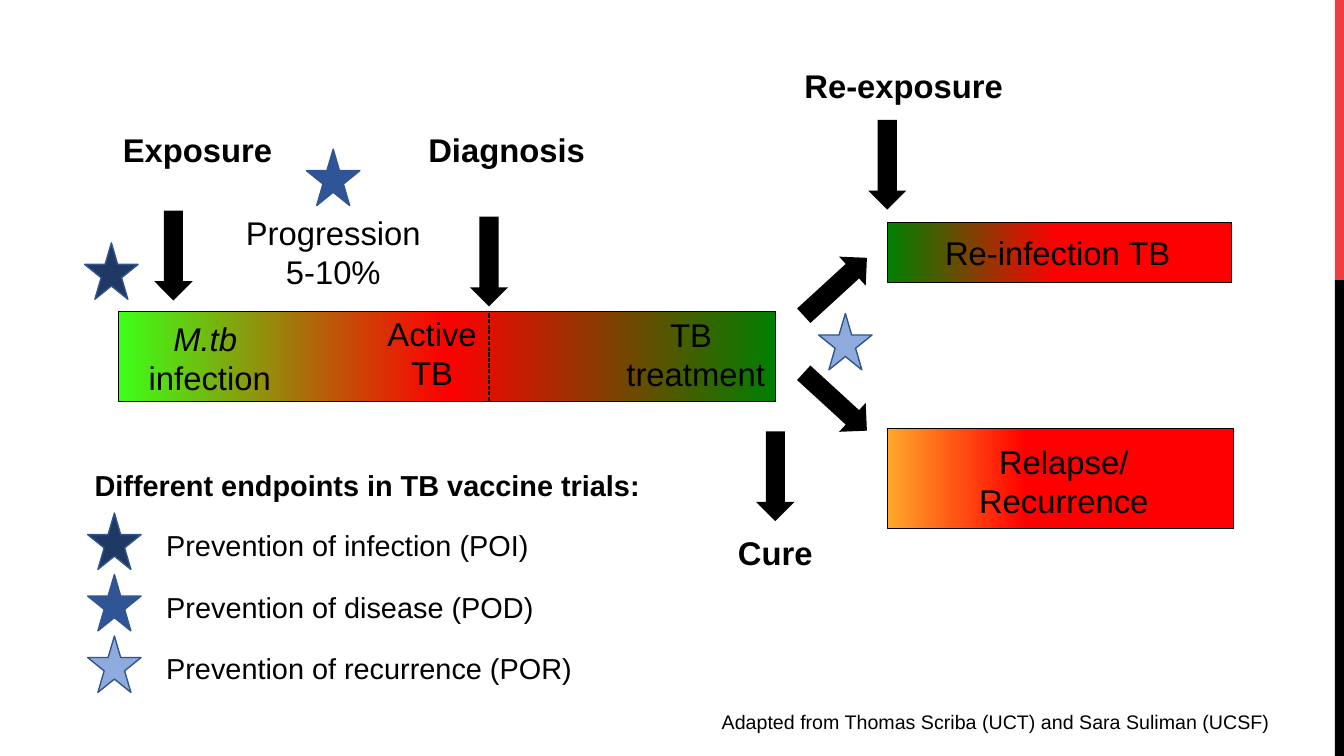
from dataclasses import dataclass

from lxml import etree
from pptx import Presentation
from pptx import util as u
from pptx.dml.color import RGBColor
from pptx.enum import dml, shapes, text
from pptx.oxml import ns

BLACK = RGBColor(0x00, 0x00, 0x00)
RED = RGBColor(0xFF, 0x00, 0x00)
GREEN = RGBColor(0x00, 0x80, 0x00)
LIME = RGBColor(0x3D, 0xFF, 0x17)
ORANGE = RGBColor(0xFF, 0xA8, 0x29)
STRIP_RED = RGBColor(0xEF, 0x3E, 0x42)
POI = RGBColor(0x20, 0x38, 0x64)
POD = RGBColor(0x2F, 0x55, 0x97)
POR = RGBColor(0x8F, 0xAA, 0xDC)
STAR_EDGE = RGBColor(0x32, 0x54, 0x91)

LABEL, LEGEND, CREDIT = 23.4, 20.6, 14
SHAPE = shapes.MSO_SHAPE


@dataclass
class Box:
    left: float
    top: float
    width: float
    height: float

    def emu(self) -> list[int]:
        return [u.Inches(v) for v in (self.left, self.top, self.width, self.height)]


@dataclass
class Bar:
    box: Box
    stops: list[tuple[int, RGBColor]]


@dataclass
class Arrow:
    box: Box
    rotation: float = 0


@dataclass
class Star:
    left: float
    top: float
    color: RGBColor


@dataclass
class Label:
    box: Box
    lines: list[str]
    size: float = LABEL
    bold: bool = False
    centered: bool = False
    wrap: bool = False
    italic_first: bool = False


def add_solid(s, kind, box: Box, color: RGBColor, edge: RGBColor | None = None):
    sp = s.shapes.add_shape(kind, *box.emu())
    sp.shadow.inherit = False
    sp.fill.solid()
    sp.fill.fore_color.rgb = color
    if edge is None:
        sp.line.fill.background()
    else:
        sp.line.color.rgb = edge
        sp.line.width = u.Pt(1)
    return sp


def add_bar(s, bar: Bar) -> None:
    sp = add_solid(s, SHAPE.RECTANGLE, bar.box, RED, BLACK)
    sp.line.width = u.Pt(0.5)
    sp.fill.gradient()
    sp.fill.gradient_angle = 0
    stop_list = sp.element.spPr.find(".//" + ns.qn("a:gsLst"))
    for old in list(stop_list):
        stop_list.remove(old)
    for percent, color in bar.stops:
        stop = etree.SubElement(stop_list, ns.qn("a:gs"), pos=str(percent * 1000))
        etree.SubElement(stop, ns.qn("a:srgbClr"), val=str(color))


def add_arrow(s, arrow: Arrow) -> None:
    add_solid(s, SHAPE.DOWN_ARROW, arrow.box, BLACK).rotation = arrow.rotation


def add_star(s, star: Star) -> None:
    box = Box(star.left, star.top, 0.53, 0.56)
    add_solid(s, SHAPE.STAR_5_POINT, box, star.color, STAR_EDGE)


def add_label(s, label: Label) -> None:
    tf = s.shapes.add_textbox(*label.box.emu()).text_frame
    tf.word_wrap = label.wrap
    for i, line in enumerate(label.lines):
        p = tf.paragraphs[0] if i == 0 else tf.add_paragraph()
        p.alignment = text.PP_ALIGN.CENTER if label.centered else text.PP_ALIGN.LEFT
        r = p.add_run()
        r.text = line
        font_format = {
            "name": "Arial",
            "size": u.Pt(label.size),
            "bold": label.bold,
            "italic": label.italic_first and i == 0,
        }
        for name, value in font_format.items():
            setattr(r.font, name, value)
        r.font.color.rgb = BLACK


def add_dashed_line(s, x: float, top: float, bottom: float) -> None:
    ends = [u.Inches(v) for v in (x, top, x, bottom)]
    line = s.shapes.add_connector(shapes.MSO_CONNECTOR.STRAIGHT, *ends)
    line.line.color.rgb = BLACK
    line.line.width = u.Pt(1)
    line.line.dash_style = dml.MSO_LINE.SQUARE_DOT
    etree.SubElement(line.element.spPr, ns.qn("a:effectLst"))


BARS = [
    Bar(Box(1.17, 3.09, 6.52, 0.89), [(0, LIME), (50, RED), (100, GREEN)]),
    Bar(Box(8.8, 2.21, 3.41, 0.59), [(0, GREEN), (50, RED)]),
    Bar(Box(8.8, 4.25, 3.43, 0.99), [(0, ORANGE), (40, RED)]),
]

# Downward event arrows, then the two diagonal branches
ARROWS = [
    Arrow(Box(left, top, 0.38, 0.89))
    for left, top in [(1.53, 2.09), (4.66, 2.15), (8.61, 1.19), (7.5, 4.28)]
] + [
    Arrow(Box(8.09, 2.42, 0.39, 0.85), 227.5),
    Arrow(Box(8.09, 3.56, 0.39, 0.85), 312.5),
]

LABELS = [
    Label(Box(1.12, 1.24, 1.7, 0.49), ["Exposure"], bold=True),
    Label(Box(4.15, 1.24, 1.77, 0.49), ["Diagnosis"], bold=True),
    Label(Box(7.22, 5.24, 0.95, 0.49), ["Cure"], bold=True),
    Label(Box(7.88, 0.6, 2.19, 0.49), ["Re-exposure"], bold=True),
    Label(Box(1.37, 3.11, 1.42, 0.89), ["M.tb ", "infection"], centered=True, italic_first=True),
    Label(Box(2.33, 2.06, 1.95, 0.89), ["Progression", "5-10%"], centered=True),
    Label(Box(3.74, 3.06, 1.09, 0.89), ["Active", "TB"], centered=True),
    Label(Box(6.11, 3.07, 1.58, 0.89), ["TB ", "treatment"], centered=True),
    Label(Box(8.7, 4.33, 3.7, 0.89), ["Relapse/", "Recurrence"], centered=True, wrap=True),
    Label(Box(8.77, 2.26, 3.44, 0.49), ["Re-infection TB"], centered=True, wrap=True),
    Label(Box(0.84, 4.59, 5.67, 0.45), ["Different endpoints in TB vaccine trials:"], LEGEND, bold=True),
    Label(Box(7.06, 6.99, 5.66, 0.33),
          ["Adapted from Thomas Scriba (UCT) and Sara Suliman (UCSF)"], CREDIT),
]

STARS = [Star(0.84, 2.41, POI), Star(3.04, 1.48, POD), Star(8.12, 3.11, POR)]

ENDPOINTS = [
    ("Prevention of infection (POI)", 3.84, POI),
    ("Prevention of disease (POD)", 3.89, POD),
    ("Prevention of recurrence (POR)", 4.27, POR),
]


def main() -> None:
    prs = Presentation()
    prs.slide_width, prs.slide_height = u.Inches(13.33), u.Inches(7.5)
    s = prs.slides.add_slide(prs.slide_layouts[6])

    # Strip on the right edge
    add_solid(s, SHAPE.RECTANGLE, Box(13.24, 0, 0.09, 2.78), STRIP_RED)
    add_solid(s, SHAPE.RECTANGLE, Box(13.24, 2.78, 0.09, 4.72), BLACK)

    # Disease course
    for bar in BARS:
        add_bar(s, bar)
    for arrow in ARROWS:
        add_arrow(s, arrow)
    for label in LABELS:
        add_label(s, label)
    add_dashed_line(s, 4.85, 3.11, 3.99)
    for star in STARS:
        add_star(s, star)

    # Legend of trial endpoints
    for i, (name, width, color) in enumerate(ENDPOINTS):
        top = 5.09 + 0.61 * i
        add_star(s, Star(0.87, top, color))
        add_label(s, Label(Box(1.55, top + 0.1, width, 0.45), [name], LEGEND))

    prs.save("out.pptx")


if __name__ == "__main__":
    main()
